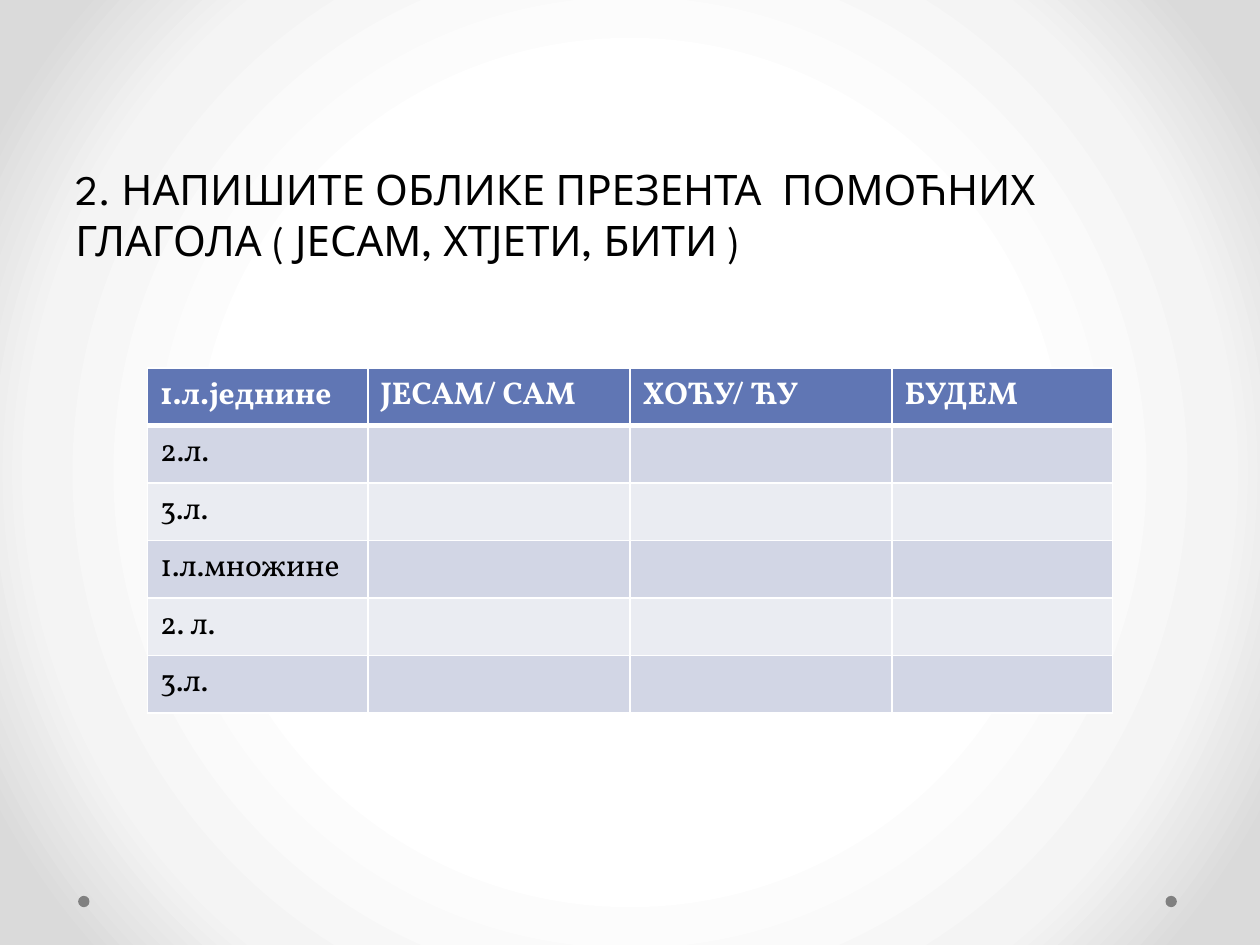
from lxml.etree import SubElement
from pptx import Presentation
from pptx.dml.color import RGBColor
from pptx.enum.shapes import MSO_SHAPE as Shape
from pptx.oxml.ns import qn
from pptx.util import Inches, Pt

# Content
TASK = "2. НАПИШИТЕ ОБЛИКЕ ПРЕЗЕНТА  ПОМОЋНИХ ГЛАГОЛА ( ЈЕСАМ, ХТЈЕТИ, БИТИ )"
VERB_FORMS = [
    ("1.л.једнине", "ЈЕСАМ/ САМ", "ХОЋУ/ ЋУ", "БУДЕМ"),
    ("2.л.", "", "", ""),
    ("3.л.", "", "", ""),
    ("1.л.множине", "", "", ""),
    ("2. л.", "", "", ""),
    ("3.л.", "", "", ""),
]

# Layout in inches
COLUMN_WIDTHS = (1.75, 2.08, 2.08, 1.75)
ROW_HEIGHT = 0.457
DOT_LEFTS = (0.62, 9.25)
DOT_TOP, DOT_SIZE = 7.11, 0.09

THEME = {
    "backdrop": [(50, "FFFFFF"), (76, "F4F4F4"), (92, "DADADA")],
    "dot": "808080",
    "ink": "000000",
    "header_ink": "FFFFFF",
    "header": "6076B4",
    "bands": ("EAECF2", "D2D6E5"),
    "border": "FFFFFF",
    "task_font": "League Spartan",
    "task_size": 24,
    "table_font": "Vollkorn",
    "table_size": 18,
}


def paint(fill, color):
    fill.solid()
    fill.fore_color.rgb = RGBColor.from_string(color)


def write(paragraph, words, font_name, size, color, bold=False):
    run = paragraph.add_run()
    run.text = words
    run.font.name = font_name
    run.font.size = Pt(size)
    run.font.bold = bold
    run.font.color.rgb = RGBColor.from_string(color)


def set_backdrop(slide):
    slide.background.fill.gradient()
    gradient = slide.element.find(".//" + qn("a:gradFill"))
    for part in list(gradient):
        gradient.remove(part)
    stops = SubElement(gradient, qn("a:gsLst"))
    for position, color in THEME["backdrop"]:
        stop = SubElement(stops, qn("a:gs"), pos=str(position * 1000))
        SubElement(stop, qn("a:srgbClr"), val=color)
    circle = SubElement(gradient, qn("a:path"), path="circle")
    SubElement(circle, qn("a:fillToRect"), l="50000", t="50000", r="50000", b="50000")


def set_borders(cell, bottom_width):
    properties = cell._tc.get_or_add_tcPr()
    widths = {"a:lnL": 1, "a:lnR": 1, "a:lnT": 1, "a:lnB": bottom_width}
    # Border lines come before the fill in the cell properties
    for index, (side, width) in enumerate(widths.items()):
        line = SubElement(properties, qn(side), w=str(Pt(width)))
        solid = SubElement(line, qn("a:solidFill"))
        SubElement(solid, qn("a:srgbClr"), val=THEME["border"])
        properties.insert(index, line)


def add_verb_table(slide):
    table = slide.shapes.add_table(
        len(VERB_FORMS), len(COLUMN_WIDTHS), Inches(1.17), Inches(2.92),
        Inches(sum(COLUMN_WIDTHS)), Inches(ROW_HEIGHT * len(VERB_FORMS))).table
    for column, width in zip(table.columns, COLUMN_WIDTHS):
        column.width = Inches(width)
    for r, forms in enumerate(VERB_FORMS):
        table.rows[r].height = Inches(ROW_HEIGHT)
        header = r == 0
        for c, form in enumerate(forms):
            cell = table.cell(r, c)
            paint(cell.fill, THEME["header"] if header else THEME["bands"][r % 2])
            set_borders(cell, 3 if header else 1)
            paragraph = cell.text_frame.paragraphs[0]
            if form:
                write(paragraph, form, THEME["table_font"], THEME["table_size"],
                      THEME["header_ink" if header else "ink"], header)
            else:
                paragraph.font.size = Pt(THEME["table_size"])


def main():
    deck = Presentation()
    deck.slide_width, deck.slide_height = Inches(10), Inches(7.5)
    slide = deck.slides.add_slide(deck.slide_layouts[6])
    set_backdrop(slide)

    # Corner dots
    for left in DOT_LEFTS:
        dot = slide.shapes.add_shape(
            Shape.OVAL, Inches(left), Inches(DOT_TOP), Inches(DOT_SIZE), Inches(DOT_SIZE))
        dot.shadow.inherit = False
        paint(dot.fill, THEME["dot"])
        dot.line.fill.background()

    # Task wording
    task = slide.shapes.add_textbox(Inches(0.5), Inches(1.25), Inches(9), Inches(5.45))
    task.text_frame.word_wrap = True
    write(task.text_frame.paragraphs[0], TASK, THEME["task_font"],
          THEME["task_size"], THEME["ink"])

    add_verb_table(slide)
    deck.save("out.pptx")


if __name__ == "__main__":
    main()
